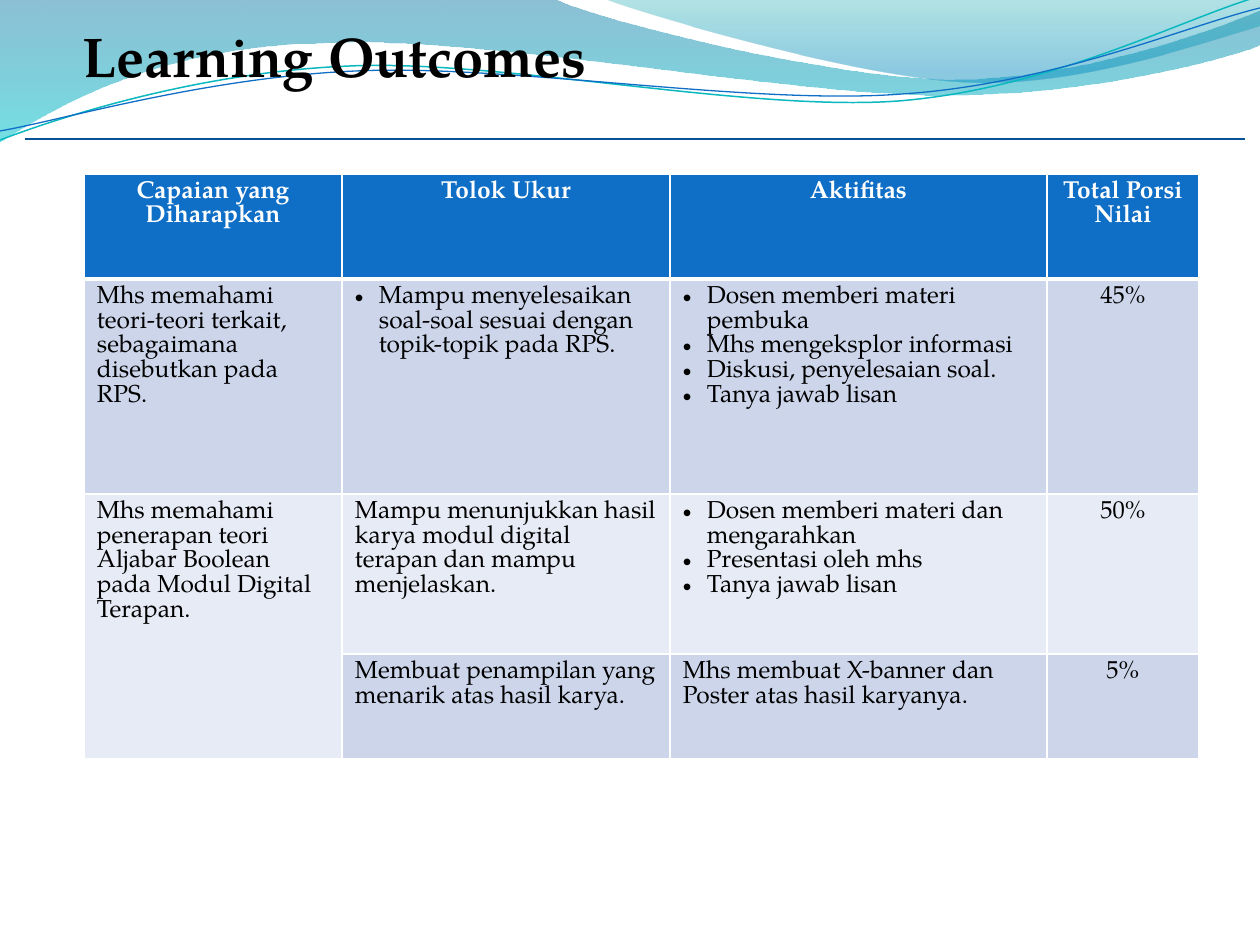
from dataclasses import dataclass

from lxml import etree
from pptx import Presentation
from pptx.dml.color import RGBColor
from pptx.enum.shapes import MSO_CONNECTOR
from pptx.enum.text import PP_ALIGN
from pptx.oxml.ns import qn
from pptx.util import Emu, Pt

PX = 914400 / 126
FONT = "TeX Gyre Pagella"
LEFT, CENTER = PP_ALIGN.LEFT, PP_ALIGN.CENTER
STRAIGHT = MSO_CONNECTOR.STRAIGHT

BLACK = RGBColor(0x00, 0x00, 0x00)
WHITE = RGBColor(0xFF, 0xFF, 0xFF)
BLUE = RGBColor(0x0F, 0x6F, 0xC6)
NAVY = RGBColor(0x09, 0x52, 0x95)
CYAN = RGBColor(0x0A, 0xB8, 0xBF)
DARK = RGBColor(0xCC, 0xD5, 0xEA)
LIGHT = RGBColor(0xE7, 0xEB, 0xF5)


@dataclass
class Stop:
    place: float
    color: RGBColor
    alpha: int


@dataclass
class Band:
    start: tuple
    steps: tuple  # one point is a line, three are a Bezier curve
    stops: tuple


@dataclass
class Wave:
    start: tuple
    steps: tuple
    color: RGBColor
    width: float


@dataclass
class Cell:
    lines: tuple
    fill: RGBColor
    align: int = LEFT
    bullet: bool = False
    head: bool = False


BANDS = (
    Band((0, 0), (
        ((554, -1),),
        ((600, 21), (837, 79), (955, 79)),
        ((1075, 79), (1207, 33), (1260, 11)),
        ((1261, 45),),
        ((1239, 55), (1096, 96), (940, 95)),
        ((783, 95), (481, 35), (324, 43)),
        ((163, 45), (58, 105), (-1, 142)),
    ), (Stop(0, RGBColor(0x00, 0x74, 0xA1), 45),
        Stop(1, RGBColor(0x00, 0xC6, 0xCF), 55))),
    Band((604, -1), (
        ((641, 14), (859, 78), (969, 82)),
        ((1079, 87), (1211, 40), (1260, 26)),
        ((1260, 0),),
    ), (Stop(0, RGBColor(0x00, 0xA1, 0xA9), 30),
        Stop(0.8, RGBColor(0x00, 0x8B, 0xBF), 45))),
)
WAVES = (
    Wave((0, 140), (
        ((60, 117), (199, 72), (349, 66)),
        ((498, 59), (747, 112), (898, 101)),
        ((1050, 89), (1182, 19), (1257, -3)),
    ), CYAN, 0.85),
    Wave((0, 131), (
        ((59, 121), (207, 77), (357, 71)),
        ((508, 64), (752, 106), (903, 94)),
        ((1053, 84), (1186, 26), (1260, 8)),
    ), BLUE, 0.75),
)

COLS = (258, 328, 377, 152)
ROWS = (105, 215, 160, 105)
HEADS = ("Capaian yang Diharapkan", "Tolok Ukur", "Aktifitas", "Total Porsi Nilai")
GRID = (
    tuple(Cell((head,), BLUE, CENTER, head=True) for head in HEADS),
    (
        Cell(("Mhs memahami teori-teori terkait, sebagaimana disebutkan pada RPS.",), DARK),
        Cell(("Mampu menyelesaikan soal-soal sesuai dengan topik-topik pada RPS.",),
             DARK, bullet=True),
        Cell(("Dosen memberi materi pembuka", "Mhs mengeksplor informasi",
              "Diskusi, penyelesaian soal.", "Tanya jawab lisan"), DARK, bullet=True),
        Cell(("45%",), DARK, CENTER),
    ),
    (
        Cell(("Mhs memahami penerapan teori Aljabar Boolean pada Modul Digital Terapan.",),
             LIGHT),
        Cell(("Mampu menunjukkan hasil karya modul digital terapan dan mampu menjelaskan.",),
             LIGHT),
        Cell(("Dosen memberi materi dan mengarahkan", "Presentasi oleh mhs",
              "Tanya jawab lisan"), LIGHT, bullet=True),
        Cell(("50%",), LIGHT, CENTER),
    ),
    (
        Cell((), LIGHT),
        Cell(("Membuat penampilan yang menarik atas hasil karya.",), DARK),
        Cell(("Mhs membuat X-banner dan Poster atas hasil karyanya.",), DARK),
        Cell(("5%",), DARK, CENTER),
    ),
)


def px(size: int) -> Emu:
    return Emu(round(size * PX))


def outline(slide, start: tuple, steps: tuple, close: bool):
    """Draw the steps as a freeform, joining each three points into a curve."""
    pen = slide.shapes.build_freeform(*start, scale=PX)
    pen.add_line_segments([point for step in steps for point in step], close=close)
    shape = pen.convert_to_shape()
    shape.shadow.inherit = False
    lines = iter(list(shape.element.iter(qn("a:lnTo"))))
    for step in steps:
        nodes = [next(lines) for _ in step]
        if len(nodes) == 3:
            curve = etree.Element(qn("a:cubicBezTo"))
            nodes[0].addprevious(curve)
            for node in nodes:
                curve.append(node[0])
                node.getparent().remove(node)
    return shape


def add_band(slide, band: Band) -> None:
    shape = outline(slide, band.start, band.steps, True)
    shape.line.fill.background()
    shape.fill.gradient()
    shape.fill.gradient_angle = 270
    for mark, stop in zip(shape.fill.gradient_stops, band.stops):
        mark.position = stop.place
        mark.color.rgb = stop.color
    for node, stop in zip(shape.element.iter(qn("a:srgbClr")), band.stops):
        etree.SubElement(node, qn("a:alpha"), val=str(stop.alpha * 1000))


def add_wave(slide, wave: Wave) -> None:
    shape = outline(slide, wave.start, wave.steps, False)
    shape.fill.background()
    shape.line.color.rgb = wave.color
    shape.line.width = Pt(wave.width)


def add_rule(slide) -> None:
    rule = slide.shapes.add_connector(STRAIGHT, px(25), px(139), px(1245), px(139))
    rule.line.color.rgb = NAVY
    rule.line.width = Pt(0.75)
    etree.SubElement(rule.element.spPr, qn("a:effectLst"))


def set_font(para, size: int, color: RGBColor, bold: bool) -> None:
    para.font.name, para.font.size, para.font.bold = FONT, Pt(size), bold
    para.font.color.rgb = color


def add_title(slide) -> None:
    frame = slide.shapes.add_textbox(px(70), px(15), px(1129), px(81)).text_frame
    frame.word_wrap = True
    frame.text = "Learning Outcomes"
    set_font(frame.paragraphs[0], 32, BLACK, True)


def add_bullet(para) -> None:
    props = para._p.get_or_add_pPr()
    props.set("marL", str(px(24)))
    props.set("indent", str(-px(24)))
    etree.SubElement(props, qn("a:buFont"), typeface="Arial")
    etree.SubElement(props, qn("a:buChar"), char="•")


def set_edges(cell, top: int, bottom: int) -> None:
    props = cell._tc.get_or_add_tcPr()
    for i, (side, width) in enumerate(zip("LRTB", (1, 1, top, bottom))):
        edge = etree.Element(qn(f"a:ln{side}"), w=str(Pt(width)))
        paint = etree.SubElement(edge, qn("a:solidFill"))
        etree.SubElement(paint, qn("a:srgbClr"), val=str(WHITE))
        props.insert(i, edge)


def fill_cell(cell, data: Cell) -> None:
    cell.fill.solid()
    cell.fill.fore_color.rgb = data.fill
    cell.margin_left = cell.margin_right = px(13)
    if not data.lines:
        return
    cell.text_frame.text = "\n".join(data.lines)
    for para in cell.text_frame.paragraphs:
        para.alignment = data.align
        para.line_spacing = Pt(13.8 if data.head else 14.2)
        set_font(para, 14, WHITE if data.head else BLACK, data.head)
        if data.bullet:
            add_bullet(para)


def add_grid(slide) -> None:
    table = slide.shapes.add_table(len(ROWS), len(COLS), px(84), px(174),
                                   px(sum(COLS)), px(sum(ROWS))).table
    for col, width in zip(table.columns, COLS):
        col.width = px(width)
    for r, (row, height) in enumerate(zip(GRID, ROWS)):
        table.rows[r].height = px(height)
        for c, data in enumerate(row):
            fill_cell(table.cell(r, c), data)
            set_edges(table.cell(r, c), 3 if r == 1 else 1, 3 if r == 0 else 1)
    table.cell(2, 0).merge(table.cell(3, 0))


def main() -> None:
    deck = Presentation()
    deck.slide_width, deck.slide_height = px(1260), px(945)
    slide = deck.slides.add_slide(deck.slide_layouts[6])
    for band in BANDS:
        add_band(slide, band)
    for wave in WAVES:
        add_wave(slide, wave)
    add_rule(slide)
    add_title(slide)
    add_grid(slide)
    deck.save("out.pptx")


if __name__ == "__main__":
    main()
